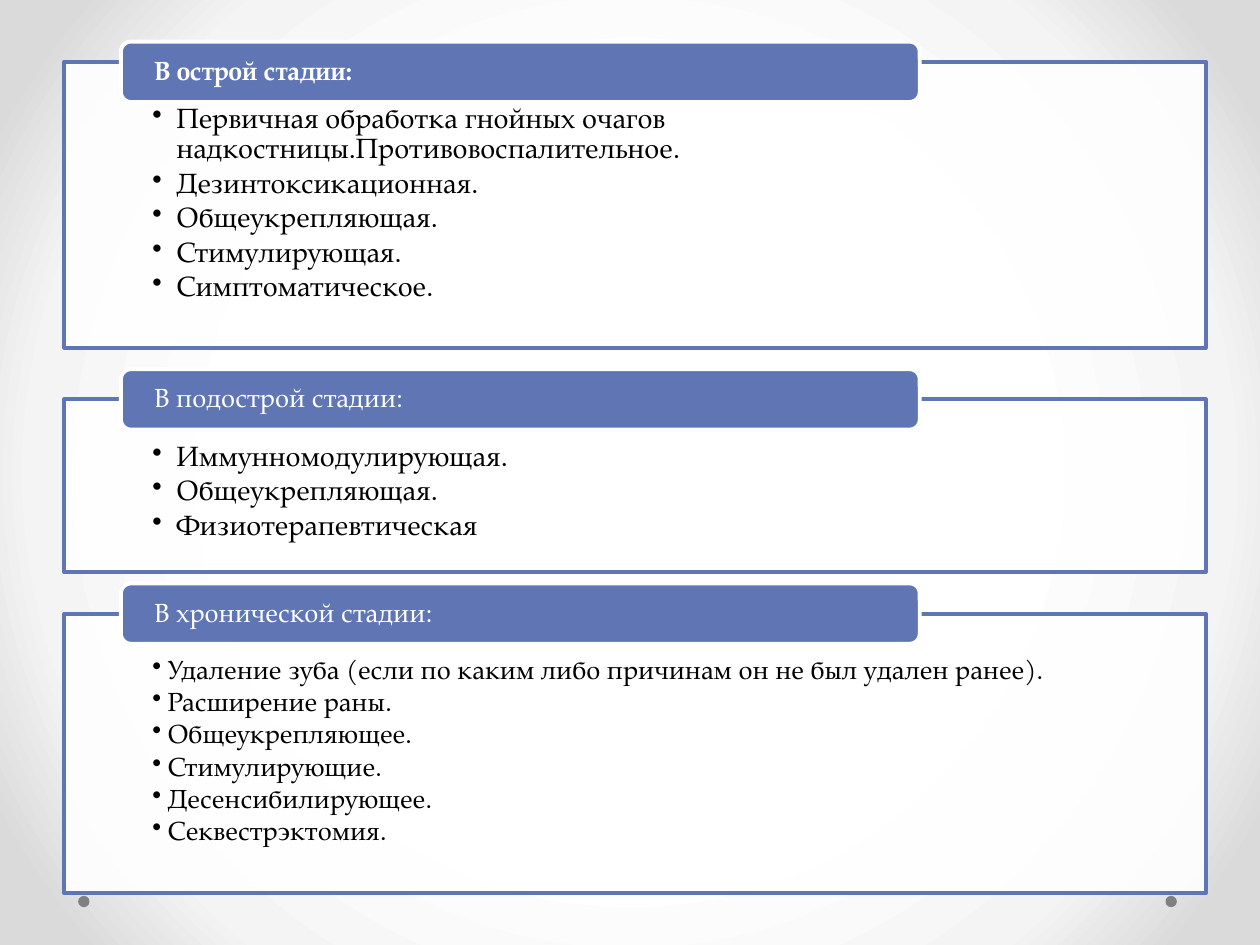
from pptx import Presentation
from pptx.dml.color import RGBColor
from pptx.enum import shapes, text
from pptx.oxml import parse_xml
from pptx.oxml.ns import nsdecls, qn
from pptx.util import Inches, Pt

FONT = "TeX Gyre Pagella"
BLUE = RGBColor(0x60, 0x76, 0xB4)
WHITE = RGBColor(0xFF, 0xFF, 0xFF)
BLACK = RGBColor(0, 0, 0)
GRAY = RGBColor(0x80, 0x80, 0x80)
BACKGROUND = [(50, "FFFFFF"), (76, "F4F4F4"), (92, "DADADA")]

STAGES = [
    dict(title="В острой стадии:", bold=True, top=0.49, height=2.27,
         size=16, indent=0.19, items=[
             "Первичная обработка гнойных очагов надкостницы.Противовоспалительное.",
             "Дезинтоксикационная.",
             "Общеукрепляющая.",
             "Стимулирующая.",
             "Симптоматическое."]),
    dict(title="В подострой стадии:", bold=False, top=3.17, height=1.37,
         size=16, indent=0.19, items=[
             "Иммунномодулирующая.",
             "Общеукрепляющая.",
             "Физиотерапевтическая"]),
    dict(title="В хронической стадии:", bold=False, top=4.87, height=2.22,
         size=15, indent=0.12, items=[
             "Удаление зуба (если по каким либо причинам он не был удален ранее).",
             "Расширение раны.",
             "Общеукрепляющее.",
             "Стимулирующие.",
             "Десенсибилирующее.",
             "Секвестрэктомия."]),
]

PANEL_LEFT, PANEL_WIDTH = 0.51, 9.06
HEADER_LEFT, HEADER_WIDTH, HEADER_HEIGHT = 0.96, 6.34, 0.48
HEADER_RISE = 0.24
HEADER_SIZE = 15
DOT_LEFTS, DOT_TOP, DOT_SIZE = (0.62, 9.25), 7.11, 0.09


def set_background(s):
    """Radial gradient spreading from the slide centre."""
    stops = "".join(f'<a:gs pos="{pos * 1000}"><a:srgbClr val="{color}"/></a:gs>'
                    for pos, color in BACKGROUND)
    s.element.cSld.insert(0, parse_xml(
        f'<p:bg {nsdecls("p", "a")}><p:bgPr><a:gradFill rotWithShape="1">'
        f'<a:gsLst>{stops}</a:gsLst><a:path path="circle">'
        '<a:fillToRect l="50000" t="50000" r="50000" b="50000"/></a:path>'
        '</a:gradFill><a:effectLst/></p:bgPr></p:bg>'))


def add_box(s, kind, left, top, width, height, fill, line=None):
    sp = s.shapes.add_shape(kind, *map(Inches, (left, top, width, height)))
    sp.shadow.inherit = False
    sp.fill.solid()
    sp.fill.fore_color.rgb = fill
    if line is None:
        sp.line.fill.background()
    else:
        sp.line.color.rgb = line
        sp.line.width = Pt(2.25)
    return sp


def set_frame(sp, anchor, side, top, bottom):
    tf = sp.text_frame
    tf.word_wrap = True
    tf.vertical_anchor = anchor
    tf.margin_left = tf.margin_right = Inches(side)
    tf.margin_top, tf.margin_bottom = Inches(top), Inches(bottom)
    return tf


def write(p, words, size, color, bold=False):
    p.alignment = text.PP_ALIGN.LEFT
    p.line_spacing = 0.9
    r = p.add_run()
    r.text = words
    r.font.name, r.font.size, r.font.bold = FONT, Pt(size), bold
    r.font.color.rgb = color


def add_bullet(p, indent):
    pPr = p._p.get_or_add_pPr()
    pPr.set("marL", str(Inches(indent)))
    pPr.set("indent", str(-Inches(indent)))
    pPr.append(parse_xml(f'<a:buChar {nsdecls("a")} char="•"/>'))


def add_panel(s, stage):
    sp = add_box(s, shapes.MSO_SHAPE.RECTANGLE, PANEL_LEFT, stage["top"],
                 PANEL_WIDTH, stage["height"], WHITE, BLUE)
    color = sp.fill._xPr.find(qn("a:solidFill"))[0]
    color.append(parse_xml(f'<a:alpha {nsdecls("a")} val="90000"/>'))
    tf = set_frame(sp, text.MSO_ANCHOR.TOP, 0.7, 0.34, 0.12)
    for i, item in enumerate(stage["items"]):
        p = tf.add_paragraph() if i else tf.paragraphs[0]
        write(p, item, stage["size"], BLACK)
        p.space_after = Pt(stage["size"] * 0.15)
        add_bullet(p, stage["indent"])


def add_header(s, stage):
    sp = add_box(s, shapes.MSO_SHAPE.ROUNDED_RECTANGLE, HEADER_LEFT,
                 stage["top"] - HEADER_RISE + (0.08 if stage["bold"] else 0),
                 HEADER_WIDTH, HEADER_HEIGHT, BLUE, WHITE)
    tf = set_frame(sp, text.MSO_ANCHOR.MIDDLE, 0.24, 0, 0)
    write(tf.paragraphs[0], stage["title"], HEADER_SIZE, WHITE, stage["bold"])


def main():
    prs = Presentation()
    prs.slide_width, prs.slide_height = Inches(10), Inches(7.5)
    s = prs.slides.add_slide(prs.slide_layouts[6])
    set_background(s)
    for left in DOT_LEFTS:
        add_box(s, shapes.MSO_SHAPE.OVAL, left, DOT_TOP, DOT_SIZE, DOT_SIZE, GRAY)
    for stage in STAGES:
        add_panel(s, stage)
        add_header(s, stage)
    prs.save("out.pptx")


if __name__ == "__main__":
    main()
